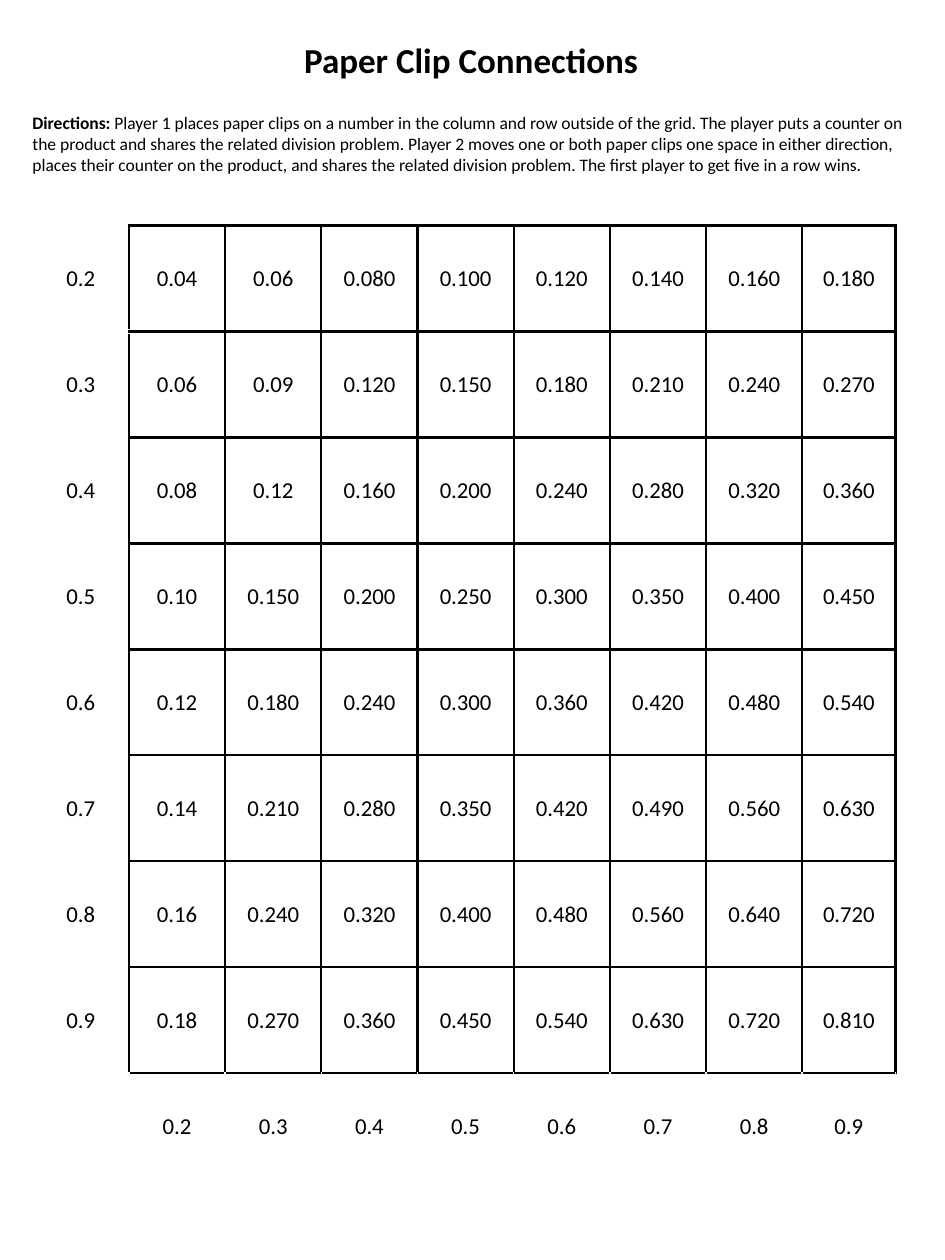
"""Build the Paper Clip Connections game board for multiplying decimals."""
from lxml.etree import SubElement
from pptx import Presentation
from pptx.dml.color import RGBColor
from pptx.enum.shapes import MSO_SHAPE
from pptx.enum.text import MSO_ANCHOR, PP_ALIGN
from pptx.oxml.ns import qn
from pptx.util import Inches, Pt

TITLE = [("Paper Clip Connections", True)]
DIRECTIONS = [
    ("Directions:", True),
    (" Player 1 places paper clips on a number in the column and row outside of the grid. "
     "The player puts a counter on the product and shares the related division problem. "
     "Player 2 moves one or both paper clips one space in either direction, places their "
     "counter on the product, and shares the related division problem. The first player to "
     "get five in a row wins.", False),
]
TENTHS = range(2, 10)
COLORS = {"paper": "FFFFFF", "ink": "000000"}
FONT = "Calibri"
SLIDE_WIDTH, SLIDE_HEIGHT = 7.5, 10
BANNER_LEFT, BANNER_WIDTH, BANNER_HEIGHT = 0.16, 7.16, 0.62
BOARD_LEFT, BOARD_TOP, BOARD_WIDTH, BOARD_HEIGHT = 0.26, 1.79, 6.85, 7.57
LAST_COLUMN = 0.74
GRID_LINE, HIDDEN_LINE = ("ink", 1.5), ("paper", 1)


def color(name):
    return RGBColor.from_string(COLORS[name])


def style_font(paragraph, size):
    paragraph.font.name = FONT
    paragraph.font.size = Pt(size)
    paragraph.font.color.rgb = color("ink")


def add_banner(slide, top, runs, size, alignment):
    shape = slide.shapes.add_shape(
        MSO_SHAPE.RECTANGLE, Inches(BANNER_LEFT), Inches(top),
        Inches(BANNER_WIDTH), Inches(BANNER_HEIGHT))
    shape.shadow.inherit = False
    shape.fill.solid()
    shape.fill.fore_color.rgb = color("paper")
    shape.line.color.rgb = color("paper")
    shape.line.width = Pt(1)
    shape.text_frame.word_wrap = True
    shape.text_frame.vertical_anchor = MSO_ANCHOR.MIDDLE
    paragraph = shape.text_frame.paragraphs[0]
    paragraph.alignment = alignment
    style_font(paragraph, size)
    for text, bold in runs:
        run = paragraph.add_run()
        run.text = text
        run.font.bold = bold


def product_text(row, column):
    short = column == 2 or (column == 3 and row <= 4)
    return f"{row * column / 100:.{2 if short else 3}f}"


def board_rows():
    rows = [[f"0.{row}"] + [product_text(row, column) for column in TENTHS] for row in TENTHS]
    return rows + [[""] + [f"0.{column}" for column in TENTHS]]


def cell_borders(row, column):
    last_row = len(TENTHS)
    if column and row < last_row:
        return dict.fromkeys("LRTB", GRID_LINE)
    borders = dict.fromkeys("LRTB", HIDDEN_LINE)
    if row < last_row:
        borders["R"] = GRID_LINE
    elif column:
        borders["T"] = GRID_LINE
    if row == column == 0:
        borders["B"] = ("paper", 3)
    return borders


def set_borders(cell, borders):
    properties = cell._tc.get_or_add_tcPr()
    for index, (side, (name, width)) in enumerate(borders.items()):
        line = SubElement(properties, qn(f"a:ln{side}"), w=str(Pt(width)))
        fill = SubElement(line, qn("a:solidFill"))
        SubElement(fill, qn("a:srgbClr"), val=COLORS[name])
        properties.insert(index, line)


def add_board(slide):
    rows = board_rows()
    count = len(rows)
    table = slide.shapes.add_table(
        count, count, Inches(BOARD_LEFT), Inches(BOARD_TOP),
        Inches(BOARD_WIDTH), Inches(BOARD_HEIGHT)).table
    table.first_row = table.horz_banding = False
    for index in range(count):
        table.rows[index].height = Inches(BOARD_HEIGHT / count)
        table.columns[index].width = Inches((BOARD_WIDTH - LAST_COLUMN) / (count - 1))
    table.columns[count - 1].width = Inches(LAST_COLUMN)
    for row, texts in enumerate(rows):
        for column, text in enumerate(texts):
            cell = table.cell(row, column)
            cell.fill.solid()
            cell.fill.fore_color.rgb = color("paper")
            cell.vertical_anchor = MSO_ANCHOR.MIDDLE
            cell.margin_left = cell.margin_right = Inches(0.06)
            cell.margin_top = cell.margin_bottom = 0
            paragraph = cell.text_frame.paragraphs[0]
            paragraph.alignment = PP_ALIGN.CENTER
            style_font(paragraph, 13)
            if text:
                paragraph.add_run().text = text
            set_borders(cell, cell_borders(row, column))


def main():
    presentation = Presentation()
    presentation.slide_width = Inches(SLIDE_WIDTH)
    presentation.slide_height = Inches(SLIDE_HEIGHT)
    slide = presentation.slides.add_slide(presentation.slide_layouts[6])
    add_banner(slide, 0.16, TITLE, 20, PP_ALIGN.CENTER)
    add_banner(slide, 0.83, DIRECTIONS, 10, PP_ALIGN.LEFT)
    add_board(slide)
    presentation.save("out.pptx")


if __name__ == "__main__":
    main()
